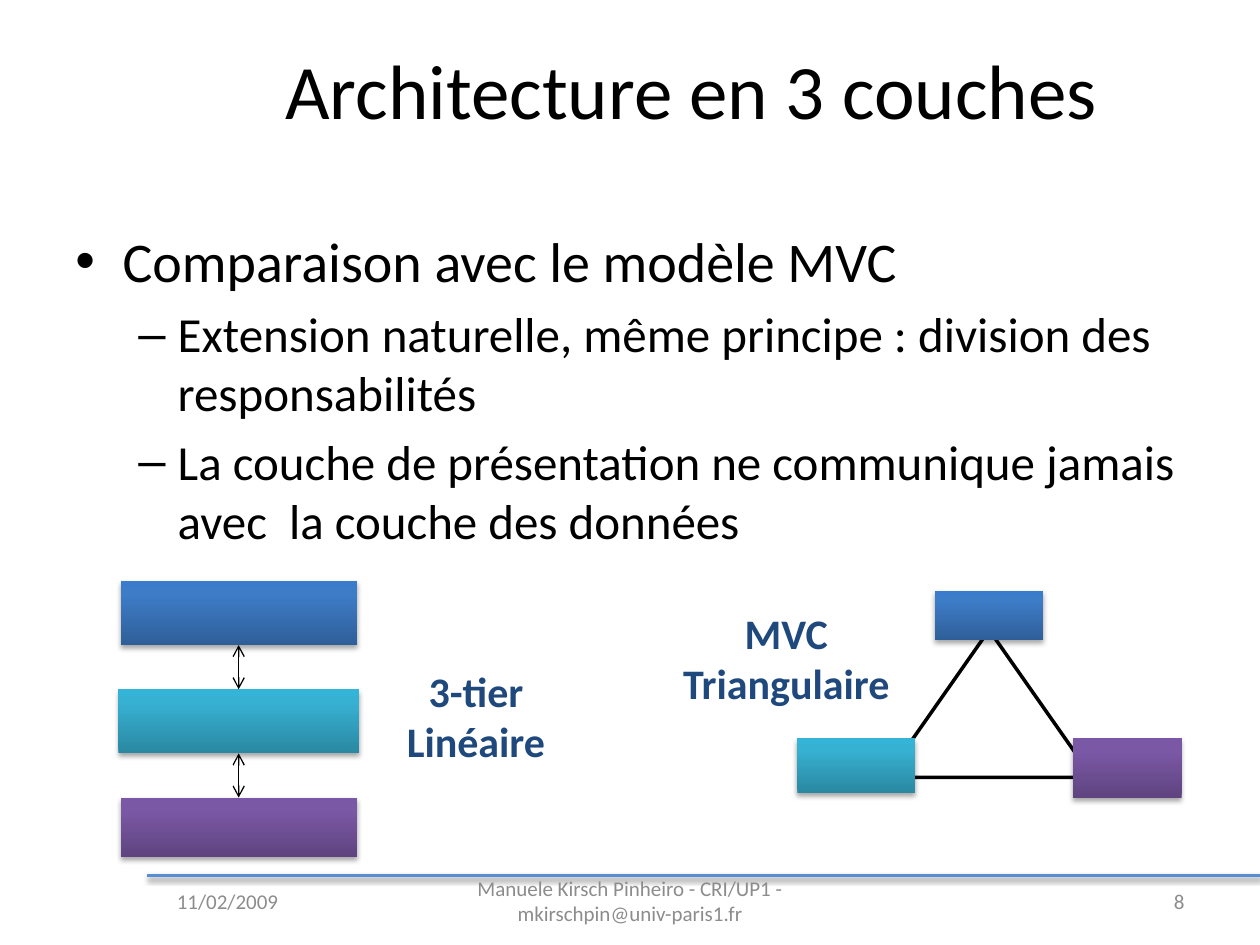
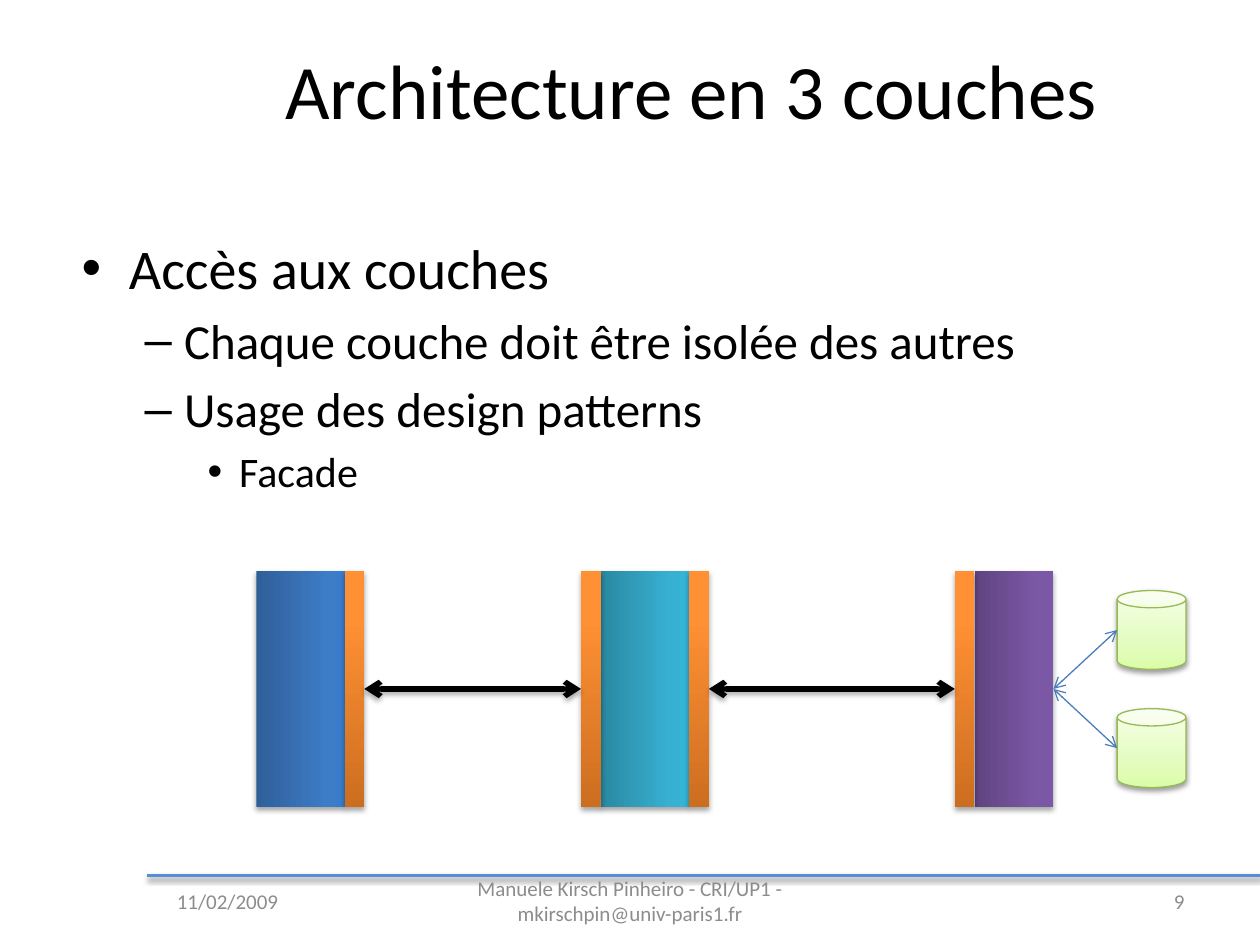
from copy import deepcopy

from lxml.etree import SubElement
from pptx import Presentation
from pptx.dml.color import RGBColor
from pptx.enum.shapes import MSO_CONNECTOR as Connector
from pptx.enum.shapes import MSO_SHAPE as Shape
from pptx.enum.text import MSO_ANCHOR as Anchor
from pptx.enum.text import MSO_AUTO_SIZE as AutoSize
from pptx.enum.text import PP_ALIGN as Align
from pptx.oxml.ns import qn
from pptx.util import Pt

BLACK = RGBColor(0x00, 0x00, 0x00)
GREY = RGBColor(0x8C, 0x8C, 0x8C)
NAVY = RGBColor(0x1F, 0x49, 0x7D)
BAND_BLUE = RGBColor(0x55, 0x8E, 0xD5)
LINK_BLUE = RGBColor(0x4B, 0x7E, 0xBC)
CAN_GREEN = RGBColor(0x98, 0xB9, 0x55)

BLUE = [(0, RGBColor(0x2F, 0x5F, 0x99)), (0.8, RGBColor(0x3D, 0x7C, 0xC7)), (1, RGBColor(0x3A, 0x7C, 0xCB))]
TEAL = [(0, RGBColor(0x2A, 0x88, 0xA2)), (0.8, RGBColor(0x37, 0xB1, 0xD2)), (1, RGBColor(0x34, 0xB4, 0xD6))]
PURPLE = [(0, RGBColor(0x5F, 0x44, 0x80)), (0.8, RGBColor(0x7B, 0x58, 0xA6)), (1, RGBColor(0x7C, 0x57, 0xA8))]
ORANGE = [(0, RGBColor(0xCC, 0x6E, 0x20)), (0.8, RGBColor(0xFF, 0x90, 0x34)), (1, RGBColor(0xFF, 0x91, 0x36))]
GREEN = [(0, RGBColor(0xDA, 0xFD, 0xA7)), (0.35, RGBColor(0xE4, 0xFC, 0xC2)), (1, RGBColor(0xF5, 0xFF, 0xE7))]

UPWARD, RIGHTWARD = 90, 0
TOP, LEFT, BOTTOM, RIGHT = range(4)
STRONG_SHADOW = (38, 1.6)
SOFT_SHADOW = (35, 1.8)

BODY_LEVELS = [("•", 32, 27, 27), ("–", 28, 58.5, 22.5), ("•", 24, 90, 18)]
TITLE = "Architecture en 3 couches"
FOOTERS = [
    ("11/02/2009", 46, 168, Align.CENTER),
    ("Manuele Kirsch Pinheiro - CRI/UP1 - mkirschpin@univ-paris1.fr", 246, 228, Align.CENTER),
]


class Deck:
    font_name = "Calibri"
    footer_top = 500.4

    def __init__(self):
        self.presentation = Presentation()
        self.presentation.slide_width = Pt(720)
        self.presentation.slide_height = Pt(540)
        self.slide = None

    def add_slide(self, number):
        self.slide = self.presentation.slides.add_slide(self.presentation.slide_layouts[5])
        self.line((84.24, self.footer_top), (720, self.footer_top), BAND_BLUE, 2, shadow=STRONG_SHADOW)
        title = self.slide.shapes.title
        title.left, title.top, title.width, title.height = Pt(106.5), Pt(5.8), Pt(577.5), Pt(90)
        frame = title.text_frame
        frame.text = TITLE
        frame.auto_size = AutoSize.NONE
        frame.vertical_anchor = Anchor.MIDDLE
        self.format(frame.paragraphs[0], 44, BLACK, Align.CENTER)
        for text, left, width, align in FOOTERS + [(str(number), 516, 168, Align.RIGHT)]:
            frame = self.text(text, left, self.footer_top, width, 28.8, 12, GREY, align)
            frame.vertical_anchor = Anchor.MIDDLE

    def format(self, paragraph, size, color, align=Align.LEFT, bold=False):
        paragraph.alignment = align
        for run in paragraph.runs:
            run.font.name = self.font_name
            run.font.size = Pt(size)
            run.font.color.rgb = color
            run.font.bold = bold

    def text(self, text, left, top, width, height, size, color, align, bold=False):
        box = self.slide.shapes.add_textbox(Pt(left), Pt(top), Pt(width), Pt(height))
        frame = box.text_frame
        frame.word_wrap = True
        frame.text = text
        for paragraph in frame.paragraphs:
            self.format(paragraph, size, color, align, bold)
        return frame

    def caption(self, text, left, top, width):
        frame = self.text(text, left, top, width, 65.5, 24, NAVY, Align.CENTER, bold=True)
        frame.word_wrap = False
        frame.auto_size = AutoSize.SHAPE_TO_FIT_TEXT

    def body(self, items, left, top):
        box = self.slide.shapes.add_textbox(Pt(left), Pt(top), Pt(648), Pt(356.4))
        frame = box.text_frame
        frame.word_wrap = True
        for index, (level, text) in enumerate(items):
            paragraph = frame.add_paragraph() if index else frame.paragraphs[0]
            bullet, size, margin, hanging = BODY_LEVELS[level]
            paragraph.text = text
            paragraph.level = level
            if index:
                paragraph.space_before = Pt(size * 0.2)
            properties = paragraph._p.get_or_add_pPr()
            properties.set("marL", str(Pt(margin)))
            properties.set("indent", str(-Pt(hanging)))
            SubElement(properties, qn("a:buFont"), typeface="Arial")
            SubElement(properties, qn("a:buChar"), char=bullet)
            self.format(paragraph, size, BLACK)

    def shadow(self, shape, shadow):
        effects = SubElement(shape._element.spPr, qn("a:effectLst"))
        if shadow:
            opacity, distance = shadow
            outer = SubElement(effects, qn("a:outerShdw"), blurRad=str(Pt(3.1)), dist=str(Pt(distance)),
                               dir="5400000", rotWithShape="0")
            color = SubElement(outer, qn("a:srgbClr"), val=str(BLACK))
            SubElement(color, qn("a:alpha"), val=str(opacity * 1000))

    def outline(self, shape, color, width):
        if color is None:
            shape.line.fill.background()
        else:
            shape.line.color.rgb = color
            shape.line.width = Pt(width)

    def shape(self, kind, left, top, width, height, gradient=None, angle=UPWARD,
              line_color=None, line_width=0.75, shadow=SOFT_SHADOW):
        shape = self.slide.shapes.add_shape(kind, Pt(left), Pt(top), Pt(width), Pt(height))
        if gradient:
            shape.fill.gradient()
            shape.fill.gradient_angle = angle
            stop_list = shape._element.spPr.find(".//" + qn("a:gsLst"))
            stop_list.append(deepcopy(stop_list[-1]))
            for stop, (position, color) in zip(shape.fill.gradient_stops, gradient):
                stop.position = position
                stop.color.rgb = color
        else:
            shape.fill.background()
        self.outline(shape, line_color, line_width)
        self.shadow(shape, shadow)
        return shape

    def line(self, start, end, color, width, arrows=False, shadow=None, begin=None, finish=None):
        line = self.slide.shapes.add_connector(Connector.STRAIGHT, *map(Pt, start + end))
        if begin:
            line.begin_connect(*begin)
        if finish:
            line.end_connect(*finish)
        self.outline(line, color, width)
        if arrows:
            properties = line.line._get_or_add_ln()
            for name in ("a:headEnd", "a:tailEnd"):
                SubElement(properties, qn(name), type="arrow")
        self.shadow(line, shadow)

    def join(self, first, first_side, second, second_side, width, shadow=None):
        self.line((0, 0), (0, 0), BLACK, width, True, shadow, (first, first_side), (second, second_side))


def build_comparison(deck):
    deck.add_slide(8)
    deck.shape(Shape.ISOSCELES_TRIANGLE, 506.2, 360, 118, 84.2, line_color=BLACK, line_width=2, shadow=None)
    deck.body([
        (0, "Comparaison avec le modèle MVC"),
        (1, "Extension naturelle, même principe : division des responsabilités"),
        (1, "La couche de présentation ne communique jamais avec  la couche des données"),
    ], 36, 126)

    tier_center, tier_top, tier_pitch = 136.4, 332, 61.9
    tiers = [
        deck.shape(Shape.RECTANGLE, tier_center - width / 2, tier_top + index * tier_pitch, width, height, gradient)
        for index, (gradient, width, height) in enumerate(
            [(BLUE, 135, 36.6), (TEAL, 137.5, 36.6), (PURPLE, 135, 33.8)])
    ]
    for upper, lower in zip(tiers, tiers[1:]):
        deck.join(upper, BOTTOM, lower, TOP, 0.75)
    deck.caption("3-tier\nLinéaire", 222, 376.5, 100)

    for left, top, width, height, gradient in [
        (534.2, 337.7, 62, 28.1, BLUE),
        (455.6, 422, 67.5, 31, TEAL),
        (613.2, 422, 62, 33.8, PURPLE),
    ]:
        deck.shape(Shape.RECTANGLE, left, top, width, height, gradient)
    deck.caption("MVC\nTriangulaire", 382.3, 343.4, 134)


def build_layer_access(deck):
    deck.add_slide(9)
    deck.body([
        (0, "Accès aux couches"),
        (1, "Chaque couche doit être isolée des autres"),
        (1, "Usage des design patterns"),
        (2, "Facade"),
    ], 39.6, 129.6)

    layer_top, layer_height = 326.2, 135
    layers = [
        deck.shape(Shape.RECTANGLE, left, layer_top, width, layer_height, gradient, RIGHTWARD)
        for left, width, gradient in [(146.5, 50.5, BLUE), (343.2, 50.5, TEAL), (557, 45, PURPLE)]
    ]
    facades = [
        deck.shape(Shape.RECTANGLE, left, layer_top, 11.25, layer_height, ORANGE)
        for left in (196.9, 332, 393.8, 545.6)
    ]
    for source, target in zip(facades[::2], facades[1::2]):
        deck.join(source, RIGHT, target, LEFT, 3, SOFT_SHADOW)

    can_left, can_height = 638.4, 45
    for can_top in (337.5, 405):
        deck.shape(Shape.CAN, can_left, can_top, 39.4, can_height, GREEN,
                   line_color=CAN_GREEN, shadow=STRONG_SHADOW)
        deck.line((602, 393.7), (can_left, can_top + can_height / 2), LINK_BLUE, 0.75,
                  arrows=True, begin=(layers[-1], RIGHT))


def main():
    deck = Deck()
    build_comparison(deck)
    build_layer_access(deck)
    deck.presentation.save("out.pptx")


if __name__ == "__main__":
    main()
